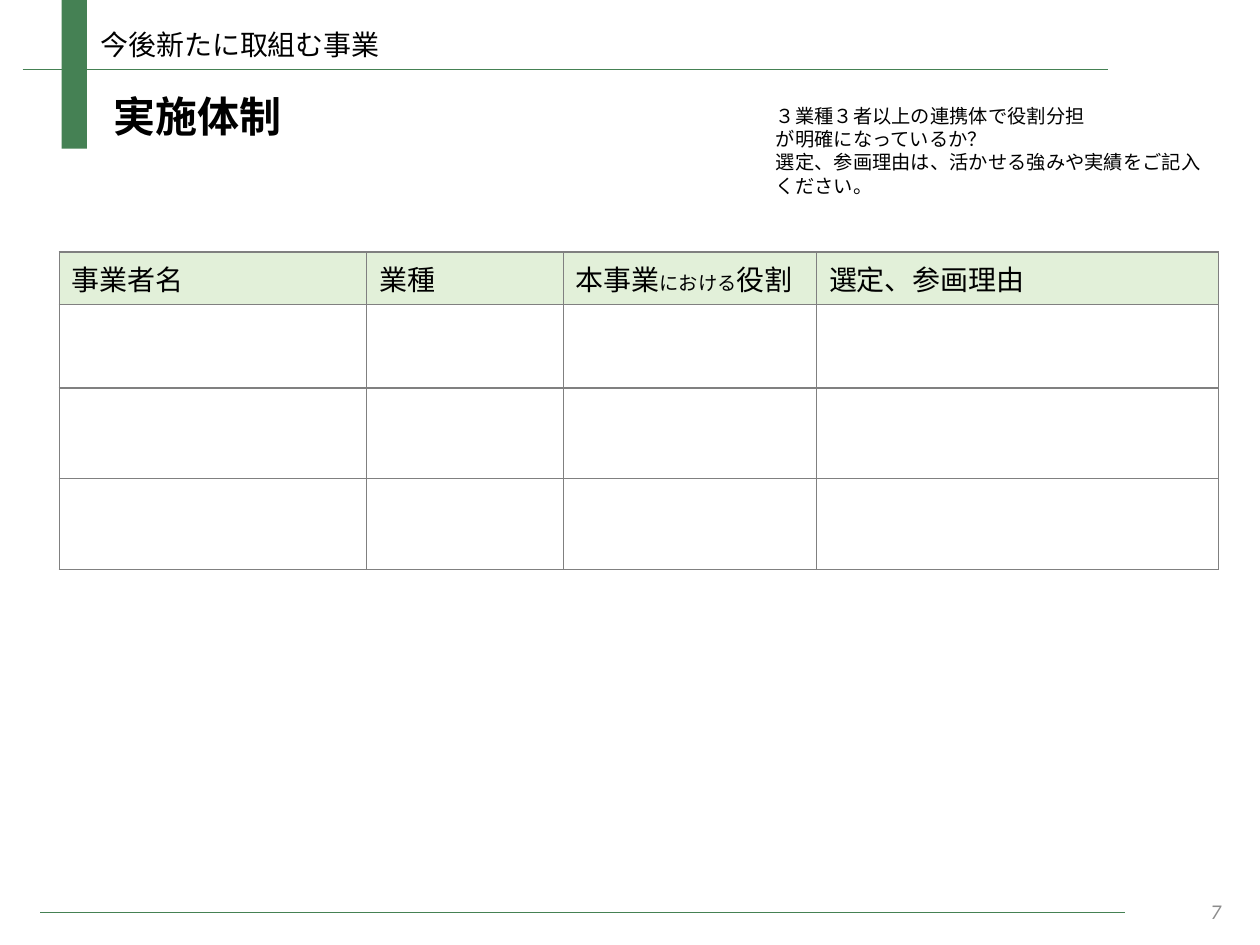
from lxml import etree
from pptx import Presentation
from pptx.dml.color import RGBColor
from pptx.enum.shapes import MSO_CONNECTOR, MSO_SHAPE
from pptx.enum.text import MSO_ANCHOR, MSO_AUTO_SIZE, PP_ALIGN
from pptx.oxml.ns import qn
from pptx.util import Inches, Pt

COLORS = {
    "green": "458154",
    "header": "E2F0D9",
    "border": "808080",
    "text": "000000",
    "number": "8C8C8C",
}
COLUMNS = [2.44, 1.56, 2.01, 3.19]
ROWS = [0.42, 0.66, 0.72, 0.72]
HEADERS = [
    [("事業者名", 16)],
    [("業種", 16)],
    [("本事業", 16), ("における", 11), ("役割", 16)],
    [("選定、参画理由", 16)],
]
NOTES = [
    "３業種３者以上の連携体で役割分担",
    "が明確になっているか？\u00a0",
    "選定、参画理由は、活かせる強みや実績をご記入ください。",
]


def rgb(name):
    """Return the palette colour with this name."""
    return RGBColor.from_string(COLORS[name])


def add_run(p, text, size=16, font="Arial", color="text", bold=False, italic=False):
    """Add a formatted run to a paragraph."""
    r = p.add_run()
    r.text = text
    r.font.size = Pt(size)
    r.font.name = font
    r.font.bold = bold
    r.font.italic = italic
    r.font.color.rgb = rgb(color)


def add_text(s, lines, x, y, w, h, align=PP_ALIGN.LEFT, anchor=MSO_ANCHOR.TOP,
             grow=True, **fmt):
    """Add a wrapped text box with one paragraph per line."""
    tf = s.shapes.add_textbox(Inches(x), Inches(y), Inches(w), Inches(h)).text_frame
    tf.word_wrap = True
    tf.auto_size = MSO_AUTO_SIZE.SHAPE_TO_FIT_TEXT if grow else MSO_AUTO_SIZE.NONE
    tf.vertical_anchor = anchor
    for i, line in enumerate(lines):
        p = tf.add_paragraph() if i else tf.paragraphs[0]
        p.alignment = align
        add_run(p, line, **fmt)


def add_bar(s, x, y, w, h):
    """Add a solid green bar."""
    sp = s.shapes.add_shape(MSO_SHAPE.RECTANGLE, Inches(x), Inches(y), Inches(w), Inches(h))
    sp.shadow.inherit = False
    sp.fill.solid()
    sp.fill.fore_color.rgb = rgb("green")
    sp.line.fill.background()


def add_rule(s, x, y, w):
    """Add a thin horizontal green line."""
    line = s.shapes.add_connector(
        MSO_CONNECTOR.STRAIGHT, Inches(x), Inches(y), Inches(x + w), Inches(y))
    line.line.color.rgb = rgb("green")
    line.line.width = Pt(0.75)
    etree.SubElement(line._element.spPr, qn("a:effectLst"))


def set_borders(cell):
    """Draw a grey line on all four sides of a cell."""
    pr = cell._tc.get_or_add_tcPr()
    for i, side in enumerate(("lnL", "lnR", "lnT", "lnB")):
        ln = etree.Element(qn(f"a:{side}"), w=str(Pt(0.75)))
        fill = etree.SubElement(ln, qn("a:solidFill"))
        etree.SubElement(fill, qn("a:srgbClr"), val=COLORS["border"])
        pr.insert(i, ln)


def add_role_table(s, x, y):
    """Add the member table with a header row and empty rows to fill in."""
    table = s.shapes.add_table(
        len(ROWS), len(COLUMNS), Inches(x), Inches(y),
        Inches(sum(COLUMNS)), Inches(sum(ROWS))).table
    table.horz_banding = False
    table.first_row = False
    for column, width in zip(table.columns, COLUMNS):
        column.width = Inches(width)
    for row, height in zip(table.rows, ROWS):
        row.height = Inches(height)
    for cell in table.iter_cells():
        cell.fill.background()
        set_borders(cell)
    for cell, runs in zip(table.rows[0].cells, HEADERS):
        cell.fill.solid()
        cell.fill.fore_color.rgb = rgb("header")
        cell.vertical_anchor = MSO_ANCHOR.MIDDLE
        for text, size in runs:
            add_run(cell.text_frame.paragraphs[0], text, size=size)


def main():
    """Build the slide and save it."""
    prs = Presentation()
    prs.slide_width, prs.slide_height = Inches(10), Inches(7.5)
    s = prs.slides.add_slide(prs.slide_layouts[6])
    add_bar(s, 0.49, 0, 0.2, 1.18)
    add_rule(s, 0.18, 0.55, 8.61)
    add_rule(s, 0.32, 7.24, 8.61)
    add_text(s, ["7"], 7.54, 7.03, 2.25, 0.4, align=PP_ALIGN.RIGHT,
             anchor=MSO_ANCHOR.MIDDLE, grow=False, size=12, font="Calibri",
             color="number", italic=True)
    add_text(s, ["実施体制"], 0.8, 0.67, 3.27, 0.5, size=24, bold=True)
    add_role_table(s, 0.47, 2)
    add_text(s, NOTES, 6.06, 0.78, 3.61, 0.84, size=11)
    add_text(s, ["今後新たに取組む事業"], 0.7, 0.17, 3.76, 0.37)
    prs.save("out.pptx")


if __name__ == "__main__":
    main()
